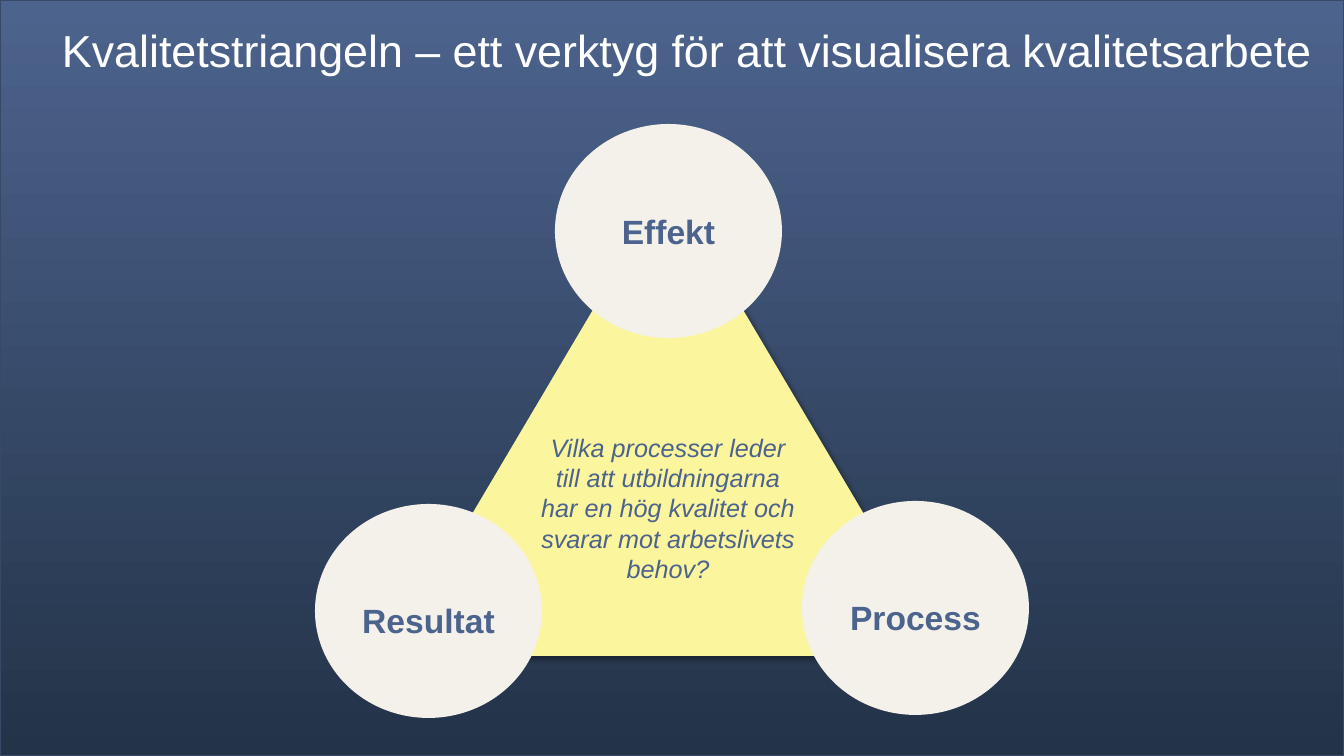
from dataclasses import dataclass

from lxml.etree import SubElement
from pptx import Presentation
from pptx.dml.color import RGBColor
from pptx.enum.shapes import MSO_SHAPE
from pptx.enum.text import MSO_ANCHOR, MSO_AUTO_SIZE, PP_ALIGN
from pptx.oxml.ns import qn
from pptx.util import Emu, Pt


@dataclass(frozen=True)
class Theme:
    font: str = "Arial"
    sky: RGBColor = RGBColor(0x4C, 0x63, 0x8D)
    night: RGBColor = RGBColor(0x23, 0x33, 0x48)
    border: RGBColor = RGBColor(0x38, 0x49, 0x68)
    cream: RGBColor = RGBColor(0xF4, 0xF1, 0xEB)
    yellow: RGBColor = RGBColor(0xFB, 0xF5, 0x9D)
    white: RGBColor = RGBColor(0xFF, 0xFF, 0xFF)
    title_size: int = 32
    corner_size: int = 24
    question_size: int = 18


THEME = Theme()
SLIDE_W, SLIDE_H = 1344, 756


def px(length):
    return Emu(round(length * 914400 / 100.8))


def write(shape, text, size, color, align=PP_ALIGN.CENTER, anchor=MSO_ANCHOR.MIDDLE,
          top=5, bottom=5, bold=False, italic=False):
    frame = shape.text_frame
    frame.word_wrap = True
    frame.vertical_anchor = anchor
    frame.margin_left = frame.margin_right = px(10)
    frame.margin_top, frame.margin_bottom = px(top), px(bottom)
    paragraph = frame.paragraphs[0]
    paragraph.alignment = align
    run = paragraph.add_run()
    run.text = text
    run.font.name = THEME.font
    run.font.size = Pt(size)
    run.font.color.rgb = color
    run.font.bold, run.font.italic = bold, italic


prs = Presentation()
prs.slide_width, prs.slide_height = px(SLIDE_W), px(SLIDE_H)
slide = prs.slides.add_slide(prs.slide_layouts[6])
shapes = slide.shapes

# Background with a gradient panel
slide.background.fill.solid()
slide.background.fill.fore_color.rgb = THEME.cream
panel = shapes.add_shape(MSO_SHAPE.RECTANGLE, 0, 0, px(SLIDE_W), px(SLIDE_H))
panel.shadow.inherit = False
panel.fill.gradient()
panel.fill.gradient_angle = 270
for stop, position, color in zip(panel.fill.gradient_stops, (0, 1), (THEME.sky, THEME.night)):
    stop.position = position
    stop.color.rgb = color
panel.line.color.rgb = THEME.border
panel.line.width = Pt(1)

# Triangle with the guiding question
triangle = shapes.add_shape(MSO_SHAPE.ISOSCELES_TRIANGLE, px(388), px(183), px(560), px(473))
triangle.shadow.inherit = False
triangle.fill.solid()
triangle.fill.fore_color.rgb = THEME.yellow
triangle.line.fill.background()
write(triangle, "Vilka processer leder till att utbildningarna har en hög kvalitet "
      "och svarar mot arbetslivets behov?",
      THEME.question_size, THEME.sky, bottom=65, italic=True)

# Soft shadow of the triangle
effects = triangle.element.spPr.find(qn("a:effectLst"))
shadow = SubElement(effects, qn("a:outerShdw"), blurRad=str(Pt(4)), dist=str(Pt(3)),
                    dir="2700000", algn="tl", rotWithShape="0")
shade = SubElement(shadow, qn("a:srgbClr"), val="000000")
SubElement(shade, qn("a:alpha"), val="40000")

# Circles at the three corners
for label, left, top, inset in (
    ("Resultat", 315, 504, 23),
    ("Effekt", 555, 124, 5),
    ("Process", 802, 501, 23),
):
    corner = shapes.add_shape(MSO_SHAPE.OVAL, px(left), px(top), px(227), px(214))
    corner.shadow.inherit = False
    corner.fill.solid()
    corner.fill.fore_color.rgb = THEME.cream
    corner.line.fill.background()
    write(corner, label, THEME.corner_size, THEME.sky, top=inset, bold=True)

# Title
title = shapes.add_textbox(px(52), px(18), px(1279), px(95))
write(title, "Kvalitetstriangeln – ett verktyg för att visualisera kvalitetsarbete",
      THEME.title_size, THEME.white, PP_ALIGN.LEFT, MSO_ANCHOR.TOP)
title.text_frame.auto_size = MSO_AUTO_SIZE.SHAPE_TO_FIT_TEXT

prs.save("out.pptx")
